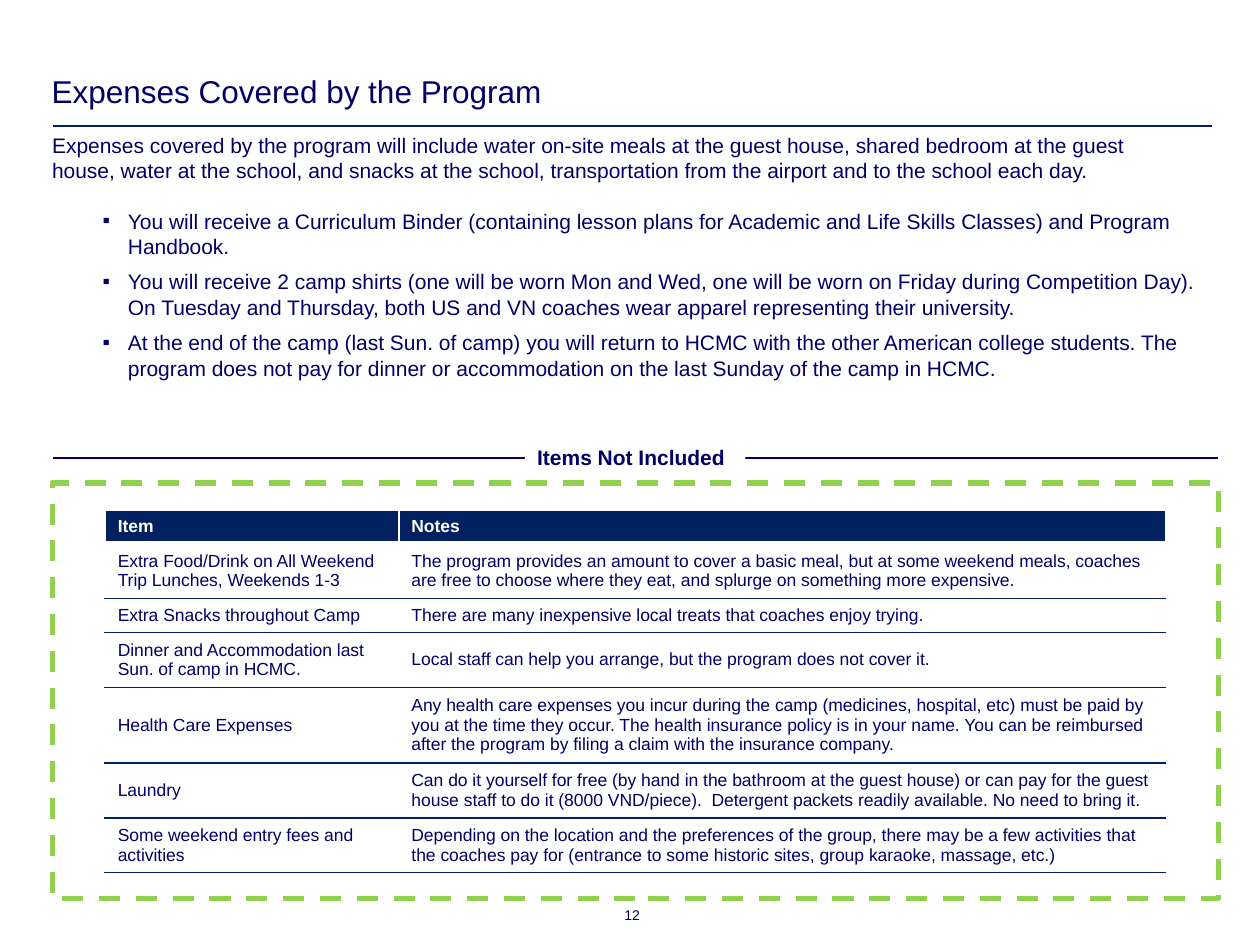
from typing import NamedTuple

from lxml.etree import SubElement
from pptx import Presentation
from pptx.dml.color import RGBColor
from pptx.enum.dml import MSO_LINE_DASH_STYLE as Dash
from pptx.enum.shapes import MSO_CONNECTOR as Link, MSO_SHAPE as Shape
from pptx.enum.text import MSO_ANCHOR as Anchor, PP_ALIGN as Align
from pptx.oxml.ns import qn
from pptx.util import Cm, Pt

INK, NAVY, WHITE, GREEN = "000066", "002060", "FFFFFF", "92D050"


class Box(NamedTuple):
    """A place on the slide, in centimetres."""
    left: float
    top: float
    width: float
    height: float

    def cm(self) -> list:
        return [Cm(n) for n in self]


class Row(NamedTuple):
    item: str
    notes: str
    height: float


class Edge(NamedTuple):
    tag: str
    color: str
    width: float


INTRO = (
    "Expenses covered by the program will include water on-site meals at the guest house, "
    "shared bedroom at the guest house, water at the school, and snacks at the school, "
    "transportation from the airport and to the school each day."
)
POINTS = [
    "You will receive a Curriculum Binder (containing lesson plans for Academic and "
    "Life Skills Classes) and Program Handbook.",
    "You will receive 2 camp shirts (one will be worn Mon and Wed, one will be worn on Friday "
    "during Competition Day).  On Tuesday and Thursday, both US and VN coaches wear apparel "
    "representing their university.",
    "At the end of the camp (last Sun. of camp) you will return to HCMC with the other American "
    "college students. The program does not pay for dinner or accommodation on the last Sunday "
    "of the camp in HCMC.",
]
ROWS = [
    Row("Item", "Notes", 0.67),
    Row("Extra Food/Drink on All Weekend Trip Lunches, Weekends 1-3",
        "The program provides an amount to cover a basic meal, but at some weekend meals, "
        "coaches are free to choose where they eat, and splurge on something more expensive.", 1.1),
    Row("Extra Snacks throughout Camp",
        "There are many inexpensive local treats that coaches enjoy trying.", 0.69),
    Row("Dinner and Accommodation last Sun. of camp in HCMC.",
        "Local staff can help you arrange, but the program does not cover it.", 1.1),
    Row("Health Care Expenses",
        "Any health care expenses you incur during the camp (medicines, hospital, etc) must be "
        "paid by you at the time they occur. The health insurance policy is in your name. You can "
        "be reimbursed after the program by filing a claim with the insurance company.", 1.53),
    Row("Laundry",
        "Can do it yourself for free (by hand in the bathroom at the guest house) or can pay for "
        "the guest house staff to do it (8000 VND/piece).  Detergent packets readily available. "
        "No need to bring it.", 1.1),
    Row("Some weekend entry fees and activities",
        "Depending on the location and the preferences of the group, there may be a few "
        "activities that the coaches pay for (entrance to some historic sites, group karaoke, "
        "massage, etc.)", 1.1),
]


def rgb(color: str) -> RGBColor:
    return RGBColor.from_string(color)


def write(frame, lines: list, size: float, color: str = INK, bold: bool = False) -> None:
    frame.text = "\n".join(lines)
    frame.word_wrap = True
    for para in frame.paragraphs:
        para.alignment = Align.LEFT
        for run in para.runs:
            font = run.font
            font.name, font.size, font.bold = "Arial", Pt(size), bold
            font.color.rgb = rgb(color)


def pad(frame, inset: float) -> None:
    frame.margin_left = frame.margin_right = Cm(inset)
    frame.margin_top = frame.margin_bottom = Cm(inset)


def add_text(slide, box: Box, lines: list, size: float):
    frame = slide.shapes.add_textbox(*box.cm()).text_frame
    write(frame, lines, size)
    return frame


def add_rule(slide, left: float, right: float, y: float, color: str, width: float) -> None:
    """Draw a level line across the slide."""
    rule = slide.shapes.add_connector(Link.STRAIGHT, Cm(left), Cm(y), Cm(right), Cm(y))
    rule.line.color.rgb = rgb(color)
    rule.line.width = Pt(width)
    SubElement(rule._element.spPr, qn("a:effectLst"))


def add_rect(slide, box: Box):
    rect = slide.shapes.add_shape(Shape.RECTANGLE, *box.cm())
    rect.shadow.inherit = False
    return rect


def add_bullet(para) -> None:
    props = para._p.get_or_add_pPr()
    props.set("marL", str(Cm(1.27)))
    props.set("indent", str(Cm(-0.51)))
    SubElement(props, qn("a:buFont"), typeface="Arial")
    SubElement(props, qn("a:buChar"), char="▪")


def set_edges(cell, edges: list) -> None:
    """Put borders before the fill, as the schema asks."""
    props = cell._tc.get_or_add_tcPr()
    for spot, edge in enumerate(edges):
        line = SubElement(props, qn(f"a:{edge.tag}"), w=str(Pt(edge.width)))
        fill = SubElement(line, qn("a:solidFill"))
        SubElement(fill, qn("a:srgbClr"), val=edge.color)
        props.insert(spot, line)


def add_grid(slide, box: Box, widths: list, rows: list) -> None:
    table = slide.shapes.add_table(len(rows), len(widths), *box.cm()).table
    for col, width in zip(table.columns, widths):
        col.width = Cm(width)
    for i, row in enumerate(rows):
        head = i == 0
        table.rows[i].height = Cm(row.height)
        top = Edge("lnT", WHITE, 1) if head else Edge("lnT", NAVY, 1)
        low = Edge("lnB", NAVY, 1)
        if head:
            low = Edge("lnB", WHITE, 3)
        elif i == 1:
            top = Edge("lnT", WHITE, 3)
        for cell, text in zip(table.rows[i].cells, (row.item, row.notes)):
            write(cell.text_frame, [text], 10, WHITE if head else INK, head)
            cell.vertical_anchor = Anchor.MIDDLE
            cell.fill.solid()
            cell.fill.fore_color.rgb = rgb(NAVY if head else WHITE)
            set_edges(cell, [Edge("lnL", WHITE, 1), Edge("lnR", WHITE, 1), top, low])


def main() -> None:
    deck = Presentation()
    deck.slide_width, deck.slide_height = Cm(25.4), Cm(19.05)
    slide = deck.slides.add_slide(deck.slide_layouts[6])

    page = add_text(slide, Box(10.36, 18.31, 2.54, 0.33), ["12"], 8)
    pad(page, 0)
    page.paragraphs[0].alignment = Align.RIGHT
    page.paragraphs[0].line_spacing = 0.95

    add_rule(slide, 1.06, 24.43, 2.54, NAVY, 1.5)
    title = add_text(slide, Box(0.91, 1.37, 21.92, 1), ["Expenses Covered by the Program"], 18)
    pad(title, 0.13)
    title.vertical_anchor = Anchor.BOTTOM
    title.paragraphs[0].line_spacing = 0.95

    add_text(slide, Box(0.8, 2.54, 23.29, 1.27), [INTRO], 12)
    points = add_text(slide, Box(1.06, 4.07, 23.5, 3.76), POINTS, 12)
    for para in points.paragraphs:
        para.space_before = Pt(6)
        add_bullet(para)

    add_grid(slide, Box(2.12, 10.28, 21.37, 7.29), [5.92, 15.45], ROWS)

    add_rule(slide, 1.06, 24.56, 9.23, INK, 1)
    label = add_rect(slide, Box(10.58, 8.84, 4.45, 0.76))
    label.fill.solid()
    label.fill.fore_color.rgb = rgb(WHITE)
    label.line.fill.background()
    write(label.text_frame, ["Items Not Included"], 12, bold=True)

    frame = add_rect(slide, Box(1.06, 9.74, 23.5, 8.38))
    frame.fill.background()
    frame.line.color.rgb = rgb(GREEN)
    frame.line.width = Pt(3)
    frame.line.dash_style = Dash.DASH

    deck.save("out.pptx")


if __name__ == "__main__":
    main()
